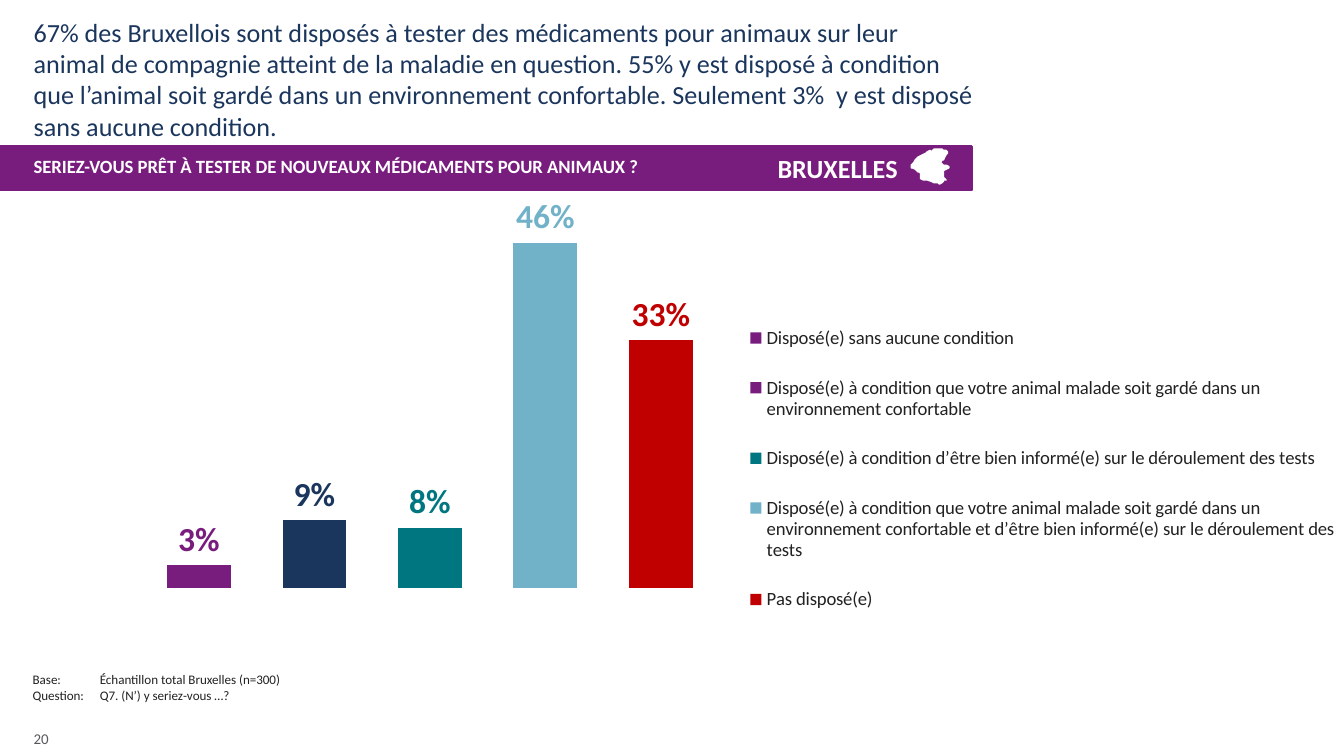
from pptx import Presentation
from pptx.chart.data import CategoryChartData
from pptx.dml.color import RGBColor
from pptx.enum.chart import XL_CHART_TYPE, XL_LABEL_POSITION, XL_LEGEND_POSITION
from pptx.enum.shapes import MSO_SHAPE
from pptx.enum.text import MSO_ANCHOR, MSO_AUTO_SIZE, PP_ALIGN
from pptx.oxml import parse_xml
from pptx.oxml.ns import nsdecls, qn
from pptx.util import Pt

COLORS = {
    "purple": "781D7E", "navy": "1B365D", "teal": "007681", "sky": "71B2C9",
    "red": "C00000", "ink": "222223", "gray": "58585B", "white": "FFFFFF",
}
FONT = "Calibri"
PERCENT = "0\\%"
ANSWERS = [
    ("Disposé(e) sans aucune condition", 3, "purple", "purple"),
    ("Disposé(e) à condition que votre animal malade soit gardé dans un "
     "environnement confortable", 9, "purple", "navy"),
    ("Disposé(e) à condition d’être bien informé(e) sur le déroulement des tests",
     8, "teal", "teal"),
    ("Disposé(e) à condition que votre animal malade soit gardé dans un "
     "environnement confortable et d’être bien informé(e) sur le déroulement des tests",
     46, "sky", "sky"),
    ("Pas disposé(e)", 33, "red", "red"),
]
BRUSSELS = [
    (681, 119), (680, 121), (679, 122), (678, 123), (678, 125), (679, 125),
    (681, 126), (683, 128), (684, 128), (685, 129), (685, 133), (687, 134),
    (690, 134), (693, 135), (695, 136), (698, 136), (699, 137), (701, 136),
    (702, 135), (702, 134), (704, 134), (702, 132), (702, 127), (704, 126),
    (706, 125), (706, 124), (704, 123), (702, 123), (701, 122), (700, 121),
    (701, 119), (702, 119), (703, 117), (704, 115), (705, 114), (705, 113),
    (704, 112), (702, 112), (701, 111), (695, 111), (693, 113), (692, 112),
    (690, 113), (689, 114), (687, 115), (685, 116), (683, 117), (682, 118),
]


def rgb(name):
    return RGBColor.from_string(COLORS[name])


def set_font(font, size, color, bold=False):
    font.name, font.size, font.bold = FONT, Pt(size), bold
    font.color.rgb = rgb(color)


def write(box, text, size=10, color="ink", bold=False, align=PP_ALIGN.LEFT,
          anchor=MSO_ANCHOR.TOP, inset=(0, 0), wrap=True, spacing=None):
    frame = box.text_frame
    frame.auto_size = MSO_AUTO_SIZE.NONE
    frame.word_wrap, frame.vertical_anchor = wrap, anchor
    frame.margin_left = frame.margin_right = Pt(inset[0])
    frame.margin_top = frame.margin_bottom = Pt(inset[1])
    frame.text = text
    for paragraph in frame.paragraphs:
        paragraph.alignment, paragraph.line_spacing = align, spacing
        for span in paragraph.runs:
            set_font(span.font, size, color, bold)


def manual_layout(x, y, width, height, inner=False):
    target = '<c:layoutTarget val="inner"/>' if inner else ""
    return parse_xml(
        f'<c:layout {nsdecls("c")}><c:manualLayout>{target}'
        '<c:xMode val="edge"/><c:yMode val="edge"/>'
        f'<c:x val="{x}"/><c:y val="{y}"/><c:w val="{width}"/><c:h val="{height}"/>'
        '</c:manualLayout></c:layout>')


def drop_layout(element):
    for layout in element.findall(qn("c:layout")):
        element.remove(layout)


class SurveyPage:
    def __init__(self, deck):
        self.page = deck.slides.add_slide(deck.slide_layouts[5])
        self.shapes = self.page.shapes

    def paint(self, shape, color, line_width):
        shape.shadow.inherit = False
        shape.fill.solid()
        shape.fill.fore_color.rgb = rgb(color)
        shape.line.color.rgb = rgb(color)
        shape.line.width = Pt(line_width)

    def title(self, text, left, top, width, height, **style):
        box = self.shapes.title
        box.left, box.top, box.width, box.height = map(Pt, (left, top, width, height))
        write(box, text, **style)

    def text(self, text, left, top, width, height, **style):
        box = self.shapes.add_textbox(*map(Pt, (left, top, width, height)))
        write(box, text, **style)

    def band(self, left, top, width, height, color):
        band = self.shapes.add_shape(
            MSO_SHAPE.RECTANGLE, *map(Pt, (left, top, width, height)))
        self.paint(band, color, 2)

    def outline(self, points, unit, color):
        builder = self.shapes.build_freeform(*points[0], scale=Pt(unit))
        builder.add_line_segments(points[1:], close=True)
        self.paint(builder.convert_to_shape(), color, 0.75)

    def column_chart(self, answers, left, top, width, height):
        data = CategoryChartData(number_format=PERCENT)
        data.categories = ["1"]
        for name, value, _, _ in answers:
            data.add_series(name, [value])
        chart = self.shapes.add_chart(
            XL_CHART_TYPE.COLUMN_CLUSTERED,
            *map(Pt, (left, top, width, height)), data).chart
        set_font(chart.font, 18, "ink")
        chart.has_title = False
        chart.category_axis.visible = False
        axis = chart.value_axis
        axis.visible = axis.has_major_gridlines = False
        axis.minimum_scale, axis.maximum_scale = 0, 50
        plot = chart.plots[0]
        plot.vary_by_categories = False
        plot.gap_width, plot.overlap = 267, -81
        for series, (_, _, key_color, bar_color) in zip(plot.series, answers):
            series.format.fill.solid()
            series.format.fill.fore_color.rgb = rgb(key_color)
            if bar_color != key_color:
                fill = series.points[0].format.fill
                fill.solid()
                fill.fore_color.rgb = rgb(bar_color)
            labels = series.data_labels
            labels.show_value = True
            labels.number_format, labels.number_format_is_linked = PERCENT, False
            labels.position = XL_LABEL_POSITION.OUTSIDE_END
            set_font(labels.font, 18, bar_color, True)
        chart.has_legend = True
        legend = chart.legend
        legend.position = XL_LEGEND_POSITION.RIGHT
        legend.include_in_layout = False
        set_font(legend.font, 10, "ink")
        key = legend._element
        drop_layout(key)
        key.find(qn("c:legendPos")).addnext(manual_layout(0.56, 0.22, 0.44, 0.7))
        area = chart._chartSpace.chart.plotArea
        drop_layout(area)
        area.insert(0, manual_layout(0.061, 0.042, 0.518, 0.773, inner=True))


def main():
    deck = Presentation()
    deck.slide_width, deck.slide_height = Pt(720), Pt(405)
    survey = SurveyPage(deck)
    survey.text("20", 18, 381.6, 24.5, 18.7, size=8, color="gray",
                anchor=MSO_ANCHOR.BOTTOM, wrap=False, spacing=0.85)
    survey.band(0, 78.5, 520.5, 23, "purple")
    survey.title(
        "67% des Bruxellois sont disposés à tester des médicaments pour animaux sur "
        "leur animal de compagnie atteint de la maladie en question. 55% y est disposé "
        "à condition que l’animal soit gardé dans un environnement confortable. "
        "Seulement 3%  y est disposé sans aucune condition.",
        18, 8.6, 504, 42.5, size=14, color="navy")
    survey.text("Base:\tÉchantillon total Bruxelles (n=300)\n"
                "Question:\tQ7. (N’) y seriez-vous …?",
                10.4, 356.4, 511, 25.2, size=7, inset=(7.2, 3.6))
    survey.column_chart(ANSWERS, 0, 103, 720, 260)
    survey.text("BRUXELLES", 357, 81.4, 124, 17.3, size=14, color="white",
                bold=True, align=PP_ALIGN.RIGHT)
    survey.outline(BRUSSELS, 0.72, "white")
    survey.text("SERIEZ-VOUS PRÊT À TESTER DE NOUVEAUX MÉDICAMENTS POUR ANIMAUX ?",
                18, 84.2, 680.4, 14.4, color="white", bold=True, spacing=0.9)
    deck.save("out.pptx")


if __name__ == "__main__":
    main()
